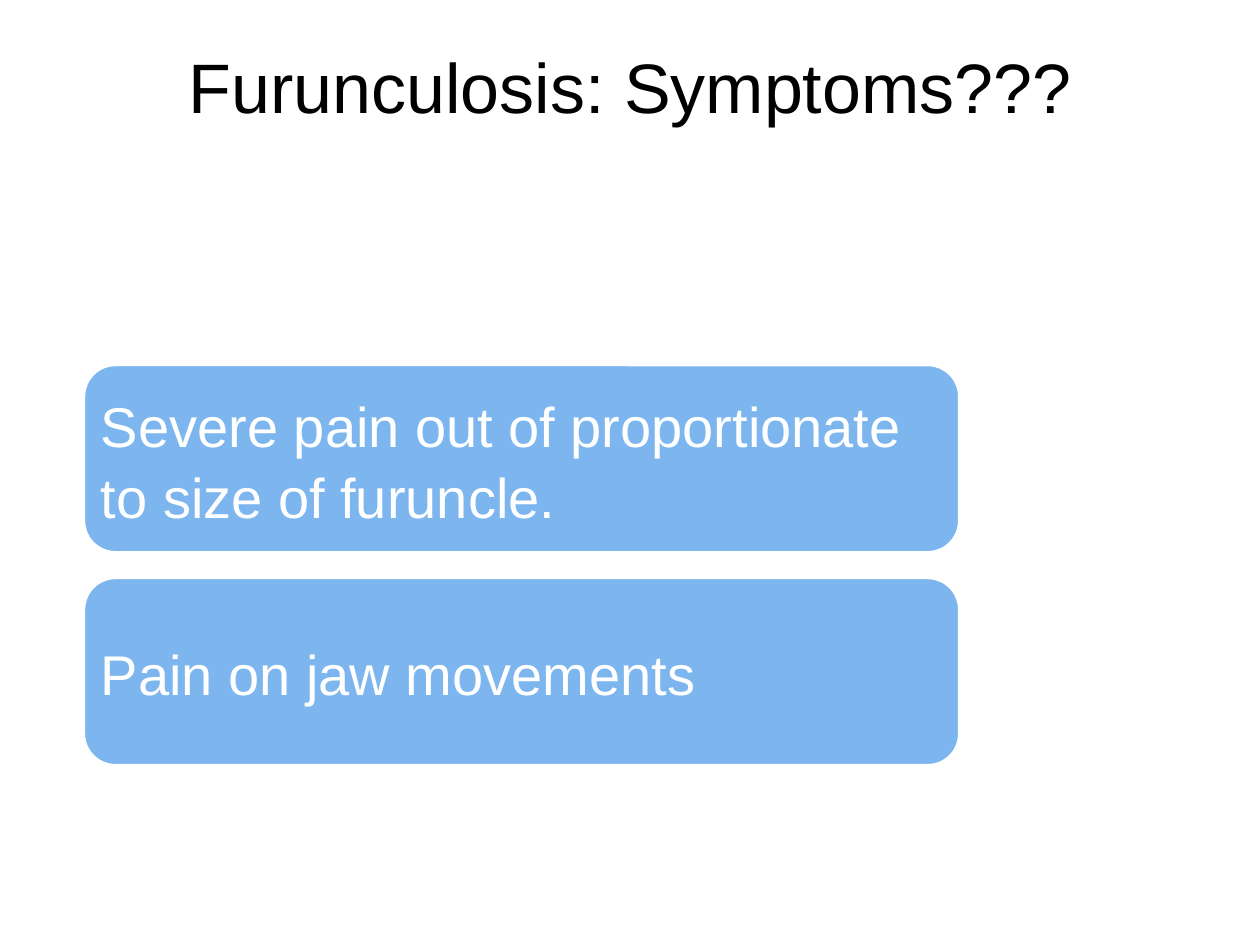
"""Build the slide on the symptoms of furunculosis."""
from pptx import Presentation
from pptx.dml.color import RGBColor
from pptx.enum.shapes import MSO_SHAPE
from pptx.enum.text import MSO_ANCHOR, PP_ALIGN
from pptx.util import Inches, Pt

ROUNDED_RECTANGLE = MSO_SHAPE.ROUNDED_RECTANGLE
TOP, MIDDLE = MSO_ANCHOR.TOP, MSO_ANCHOR.MIDDLE
LEFT, CENTER = PP_ALIGN.LEFT, PP_ALIGN.CENTER

BLACK = RGBColor(0x00, 0x00, 0x00)
WHITE = RGBColor(0xFF, 0xFF, 0xFF)
BLUE = RGBColor(0x7D, 0xB6, 0xEF)

FONT = "Arial"
SYMPTOMS = [
    "Severe pain out of proportionate to size of furuncle.",
    "Pain on jaw movements",
]
CARD_LEFT, CARD_TOP, CARD_WIDTH, CARD_HEIGHT = 0.67, 2.9, 6.94, 1.48
CARD_PITCH = 1.69


def write_text(shape, text, *, size, color, align=LEFT, anchor=TOP,
               margins=(0.1, 0.05), line_spacing=1.0):
    """Write one formatted paragraph into a shape."""
    frame = shape.text_frame
    frame.word_wrap = True
    frame.vertical_anchor = anchor
    frame.margin_left = frame.margin_right = Inches(margins[0])
    frame.margin_top = frame.margin_bottom = Inches(margins[1])
    paragraph = frame.paragraphs[0]
    paragraph.text = text
    paragraph.alignment = align
    paragraph.line_spacing = line_spacing
    paragraph.font.name = FONT
    paragraph.font.size = Pt(size)
    paragraph.font.color.rgb = color


def add_title(slide, text):
    """Add the centred title."""
    title = slide.shapes.add_textbox(Inches(0.5), Inches(0.3), Inches(9), Inches(1.25))
    write_text(title, text, size=40, color=BLACK, align=CENTER)


def add_symptom_card(slide, text, top):
    """Add a rounded card that holds one symptom."""
    card = slide.shapes.add_shape(
        ROUNDED_RECTANGLE, Inches(CARD_LEFT), Inches(top),
        Inches(CARD_WIDTH), Inches(CARD_HEIGHT))
    card.shadow.inherit = False
    card.fill.solid()
    card.fill.fore_color.rgb = BLUE
    card.line.color.rgb = WHITE
    card.line.width = Pt(1)
    write_text(card, text, size=32, color=WHITE, anchor=MIDDLE,
               margins=(0.06, 0.06), line_spacing=1.06)


def main():
    """Build and save the presentation."""
    presentation = Presentation()
    presentation.slide_width = Inches(10)
    presentation.slide_height = Inches(7.5)
    slide = presentation.slides.add_slide(presentation.slide_layouts[6])
    add_title(slide, "Furunculosis: Symptoms???")
    for index, symptom in enumerate(SYMPTOMS):
        add_symptom_card(slide, symptom, CARD_TOP + index * CARD_PITCH)
    presentation.save("out.pptx")


if __name__ == "__main__":
    main()
